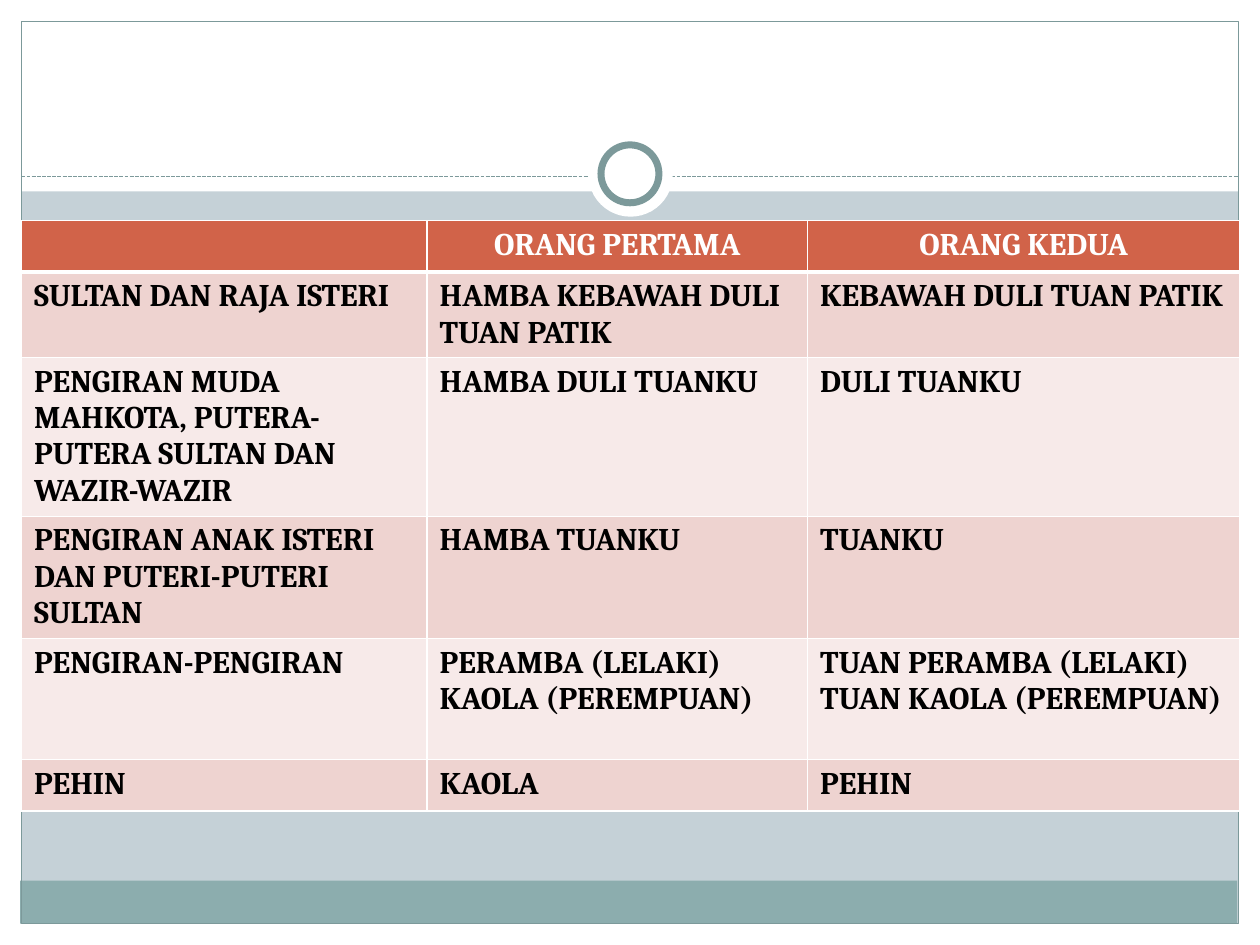
from pptx import Presentation
from pptx.dml.color import RGBColor
from pptx.enum.dml import MSO_LINE
from pptx.enum.shapes import MSO_CONNECTOR, MSO_SHAPE
from pptx.enum.text import PP_ALIGN
from pptx.oxml import parse_xml
from pptx.oxml.ns import nsdecls
from pptx.util import Inches, Pt

HUES = {
    "back": "C5D1D7", "white": "FFFFFF", "band": "8CADAE", "edge": "7C999A",
    "head": "D16349", "odd": "EED3D0", "even": "F7EAE9", "ink": "000000",
}
ROWS = [
    ("", "ORANG PERTAMA", "ORANG KEDUA"),
    ("SULTAN DAN RAJA ISTERI", "HAMBA KEBAWAH DULI TUAN PATIK",
     "KEBAWAH DULI TUAN PATIK"),
    ("PENGIRAN MUDA MAHKOTA, PUTERA-PUTERA SULTAN DAN WAZIR-WAZIR",
     "HAMBA DULI TUANKU", "DULI TUANKU"),
    ("PENGIRAN ANAK ISTERI DAN PUTERI-PUTERI SULTAN", "HAMBA TUANKU", "TUANKU"),
    ("PENGIRAN-PENGIRAN", "PERAMBA (LELAKI)\nKAOLA (PEREMPUAN)",
     "TUAN PERAMBA (LELAKI)\nTUAN KAOLA (PEREMPUAN)"),
    ("PEHIN", "KAOLA", "PEHIN"),
]
WIDTHS = [3.22, 3.02, 3.43]
HEIGHTS = [0.41, 0.67, 1.26, 0.97, 0.96, 0.41]
RECT, OVAL = MSO_SHAPE.RECTANGLE, MSO_SHAPE.OVAL
FRAME = [
    (RECT, (0, 7.33, 10, 0.17), "white", 0),
    (RECT, (0, 0, 10, 1.52), "white", 0),
    (RECT, (0, 0, 0.17, 7.5), "white", 0),
    (RECT, (9.83, 0, 0.17, 7.5), "white", 0),
    (RECT, (0.16, 6.99, 9.66, 0.34), "band", 0),
    (RECT, (0.17, 0.17, 9.66, 7.16), None, 0.75),
]
RING = [
    (OVAL, (4.67, 1.05, 0.67, 0.67), "white", 0),
    (OVAL, (4.77, 1.15, 0.46, 0.46), "white", 4),
]


def hue(name):
    return RGBColor.from_string(HUES[name])


def paint(fill, name):
    fill.solid()
    fill.fore_color.rgb = hue(name)


def draw(slide, parts):
    for kind, box, name, width in parts:
        shape = slide.shapes.add_shape(kind, *map(Inches, box))
        shape.shadow.inherit = False
        if name:
            paint(shape.fill, name)
        else:
            shape.fill.background()
        if width:
            shape.line.color.rgb = hue("edge")
            shape.line.width = Pt(width)
        else:
            shape.line.fill.background()


def rule(slide, top):
    line = slide.shapes.add_connector(
        MSO_CONNECTOR.STRAIGHT, Inches(0.17), Inches(top), Inches(9.83), Inches(top))
    line.line.color.rgb = hue("edge")
    line.line.width = Pt(0.75)
    line.line.dash_style = MSO_LINE.SQUARE_DOT
    line._element.spPr.append(parse_xml(f"<a:effectLst {nsdecls('a')}/>"))


def border(cell, sizes):
    props = cell._tc.get_or_add_tcPr()
    for spot, (side, size) in enumerate(sizes.items()):
        props.insert(spot, parse_xml(
            f'<a:ln{side} {nsdecls("a")} w="{Pt(size)}"><a:solidFill>'
            f'<a:srgbClr val="{HUES["white"]}"/></a:solidFill></a:ln{side}>'))


def style(cell, text, row):
    head = row == 0
    paint(cell.fill, "head" if head else "odd" if row % 2 else "even")
    border(cell, {"L": 1, "R": 1, "T": 3 if row == 1 else 1, "B": 3 if head else 1})
    cell.text_frame.text = text
    for para in cell.text_frame.paragraphs:
        para.alignment = PP_ALIGN.CENTER if head else PP_ALIGN.LEFT
        for run in para.runs:
            run.font.name = "Cambria"
            run.font.size = Pt(18)
            run.font.bold = True
            run.font.color.rgb = hue("white" if head else "ink")


def fill(slide):
    box = (0.17, 1.75, sum(WIDTHS), sum(HEIGHTS))
    table = slide.shapes.add_table(
        len(ROWS), len(WIDTHS), *map(Inches, box)).table
    for col, width in zip(table.columns, WIDTHS):
        col.width = Inches(width)
    for row, height in zip(table.rows, HEIGHTS):
        row.height = Inches(height)
    for r, texts in enumerate(ROWS):
        for c, text in enumerate(texts):
            style(table.cell(r, c), text, r)


def main():
    """Build the slide of royal and noble forms of address."""
    deck = Presentation()
    deck.slide_width, deck.slide_height = Inches(10), Inches(7.5)
    slide = deck.slides.add_slide(deck.slide_layouts[6])
    paint(slide.background.fill, "back")
    draw(slide, FRAME)
    rule(slide, 1.4)
    draw(slide, RING)
    fill(slide)
    deck.save("out.pptx")


if __name__ == "__main__":
    main()
